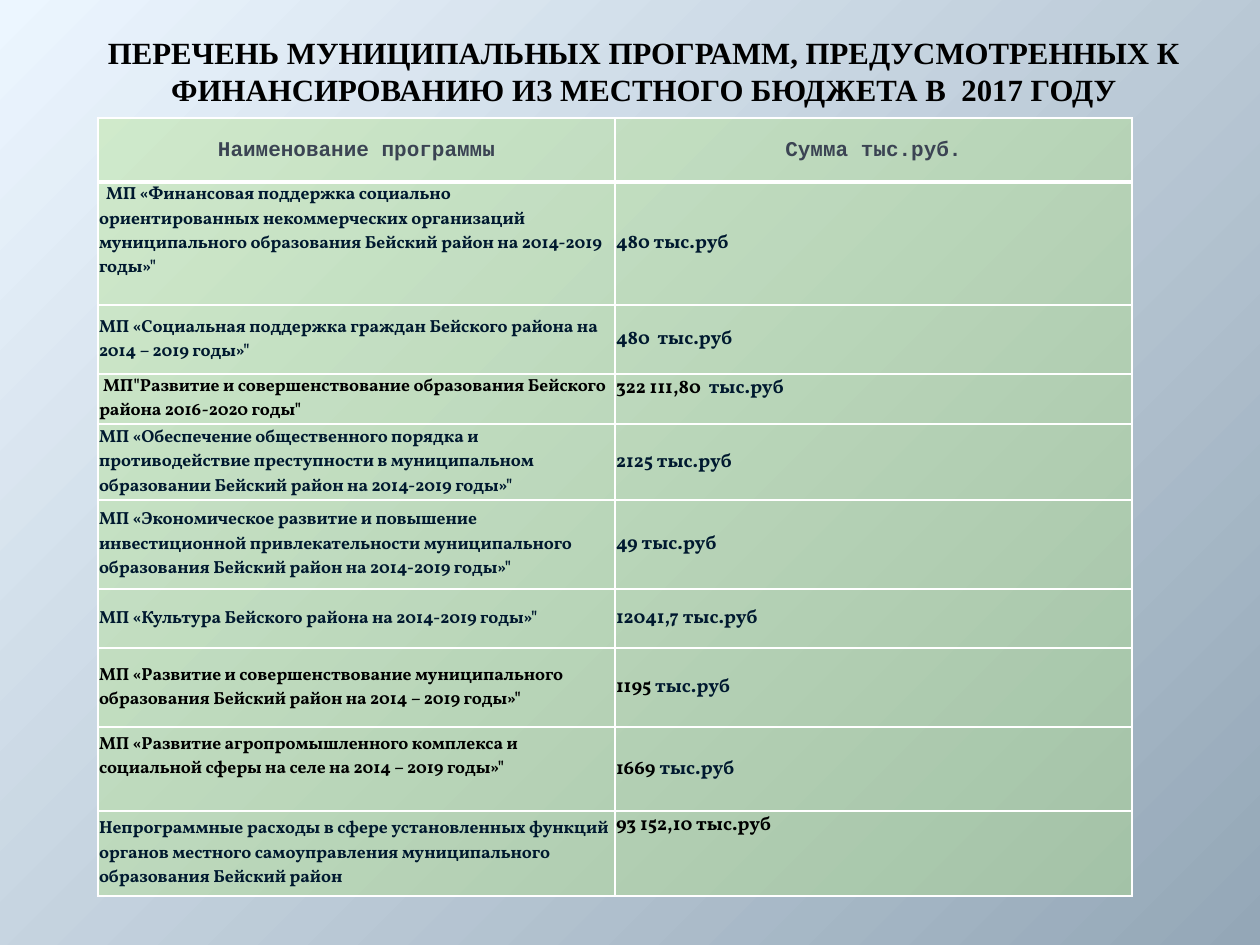
"""Build a slide listing municipal programmes and their 2017 funding."""
from dataclasses import dataclass

import lxml.etree
import pptx
import pptx.dml.color
import pptx.enum.text
import pptx.oxml
import pptx.oxml.ns
import pptx.util

EMU_PER_PX = 914400 / 126
NAVY, BLACK, SLATE, WHITE, GREEN = "00192F", "000000", "3B4453", "FFFFFF", "B2E389"
MIDDLE = pptx.enum.text.MSO_ANCHOR.MIDDLE
TOP = pptx.enum.text.MSO_ANCHOR.TOP
CENTER = pptx.enum.text.PP_ALIGN.CENTER
LEFT = pptx.enum.text.PP_ALIGN.LEFT


@dataclass
class Style:
    face: str
    size: float
    align: pptx.enum.text.PP_ALIGN = LEFT


@dataclass
class Programme:
    height: int
    name: str
    amount: str
    unit: str = "тыс.руб"
    name_color: str = NAVY
    amount_color: str = NAVY
    unit_color: str = NAVY
    amount_anchor: pptx.enum.text.MSO_ANCHOR = MIDDLE
    indent: int = 0
    bottom: int = 0


HEADING = Style("Times New Roman", 17.6, CENTER)
HEADER = Style("Courier New", 12, CENTER)
NAME = Style("Vollkorn", 10)
AMOUNT = Style("Vollkorn", 11)
HEADER_HEIGHT = 64
PROGRAMMES = [
    Programme(123, "МП «Финансовая поддержка социально ориентированных некоммерческих "
              "организаций муниципального образования Бейский район на 2014-2019 годы»\"",
              "480 ", indent=7, bottom=24),
    Programme(69, "МП «Социальная поддержка граждан Бейского района на 2014 – 2019 годы»\"",
              "480  "),
    Programme(50, "МП\"Развитие и совершенствование образования Бейского района "
              "2016-2020 годы\"", "322 111,80  ", name_color=BLACK,
              amount_color=BLACK, amount_anchor=TOP, indent=4),
    Programme(76, "МП «Обеспечение общественного порядка и противодействие преступности "
              "в муниципальном образовании Бейский район на 2014-2019 годы»\"", "2125 "),
    Programme(89, "МП «Экономическое развитие и повышение инвестиционной привлекательности "
              "муниципального образования Бейский район на 2014-2019 годы»\"", "49 "),
    Programme(59, "МП «Культура Бейского района на 2014-2019 годы»\"", "12041,7 "),
    Programme(79, "МП «Развитие и совершенствование муниципального образования "
              "Бейский район на 2014 – 2019 годы»\"", "1195 ",
              name_color=BLACK, amount_color=BLACK),
    Programme(84, "МП «Развитие агропромышленного комплекса и социальной сферы на селе "
              "на 2014 – 2019 годы»\"", "1669 ", name_color=BLACK,
              amount_color=BLACK, bottom=24),
    Programme(85, "Непрограммные расходы в сфере установленных функций органов местного "
              "самоуправления муниципального образования Бейский район", "93 152,10 ",
              amount_color=BLACK, unit_color=BLACK, amount_anchor=TOP),
]


def px(length: int) -> pptx.util.Emu:
    return pptx.util.Emu(round(length * EMU_PER_PX))


def rgb(value: str) -> pptx.dml.color.RGBColor:
    return pptx.dml.color.RGBColor.from_string(value)


def write(para, style: Style, *parts: tuple[str, str]) -> None:
    para.alignment = style.align
    para.font.name = style.face
    para.font.size = pptx.util.Pt(style.size)
    para.font.bold = True
    for text, color in parts:
        span = para.add_run()
        span.text = text
        span.font.color.rgb = rgb(color)


def paint_background(page) -> None:
    fill = page.background.fill
    fill.gradient()
    for stop, color in zip(fill.gradient_stops, ("ECF6FF", "94A7B7")):
        stop.color.rgb = rgb(color)
    gradient = page.element.find(".//" + pptx.oxml.ns.qn("a:gradFill"))
    gradient.remove(gradient.find(pptx.oxml.ns.qn("a:lin")))
    gradient.append(pptx.oxml.parse_xml(
        f'<a:path {pptx.oxml.ns.nsdecls("a")} path="circle">'
        '<a:fillToRect r="100000" b="100000"/></a:path>'))


def add_heading(page, text: str) -> None:
    box = page.shapes.add_textbox(px(98), px(29), px(1092), px(79))
    frame = box.text_frame
    frame.word_wrap = True
    frame.vertical_anchor = pptx.enum.text.MSO_ANCHOR.BOTTOM
    frame.margin_left = frame.margin_right = px(6)
    frame.margin_top = frame.margin_bottom = 0
    write(frame.paragraphs[0], HEADING, (text, BLACK))


def format_cell(cell, top: int = 1, bottom: int = 1, anchor=MIDDLE, margin: int = 0) -> None:
    cell.vertical_anchor = anchor
    cell.margin_left = cell.margin_right = cell.margin_top = px(1)
    cell.margin_bottom = px(margin)
    properties = cell._tc.get_or_add_tcPr()
    for side, width in (("L", 1), ("R", 1), ("T", top), ("B", bottom)):
        properties.append(pptx.oxml.parse_xml(
            f'<a:ln{side} {pptx.oxml.ns.nsdecls("a")} w="{pptx.util.Pt(width)}">'
            f'<a:solidFill><a:srgbClr val="{WHITE}"/></a:solidFill></a:ln{side}>'))
    cell.fill.solid()
    cell.fill.fore_color.rgb = rgb(GREEN)
    color = properties.find(pptx.oxml.ns.qn("a:solidFill"))[0]
    lxml.etree.SubElement(color, pptx.oxml.ns.qn("a:alpha"), val="40000")


def add_programmes(page, programmes: list[Programme]) -> None:
    heights = [HEADER_HEIGHT] + [item.height for item in programmes]
    table = page.shapes.add_table(len(heights), 2, px(98), px(118),
                                  px(1034), px(sum(heights))).table
    for row, height in zip(table.rows, heights):
        row.height = px(height)
    for column, label in enumerate(("Наименование программы", "Сумма тыс.руб.")):
        cell = table.cell(0, column)
        format_cell(cell, bottom=3)
        write(cell.text_frame.paragraphs[0], HEADER, (label, SLATE))
    for index, item in enumerate(programmes, start=1):
        name, amount = table.cell(index, 0), table.cell(index, 1)
        top = 3 if index == 1 else 1
        format_cell(name, top, margin=item.bottom)
        format_cell(amount, top, anchor=item.amount_anchor)
        para = name.text_frame.paragraphs[0]
        write(para, NAME, (item.name, item.name_color))
        if item.indent:
            para._p.get_or_add_pPr().set("indent", str(px(item.indent)))
        parts = [(item.amount, item.amount_color), (item.unit, item.unit_color)]
        if item.amount_color == item.unit_color:
            parts = [(item.amount + item.unit, item.amount_color)]
        write(amount.text_frame.paragraphs[0], AMOUNT, *parts)


def main() -> None:
    deck = pptx.Presentation()
    deck.slide_width, deck.slide_height = px(1260), px(945)
    page = deck.slides.add_slide(deck.slide_layouts[6])
    paint_background(page)
    add_programmes(page, PROGRAMMES)
    add_heading(page, "ПЕРЕЧЕНЬ МУНИЦИПАЛЬНЫХ ПРОГРАММ, ПРЕДУСМОТРЕННЫХ К "
                "ФИНАНСИРОВАНИЮ ИЗ МЕСТНОГО БЮДЖЕТА В  2017 ГОДУ")
    deck.save("out.pptx")


if __name__ == "__main__":
    main()
